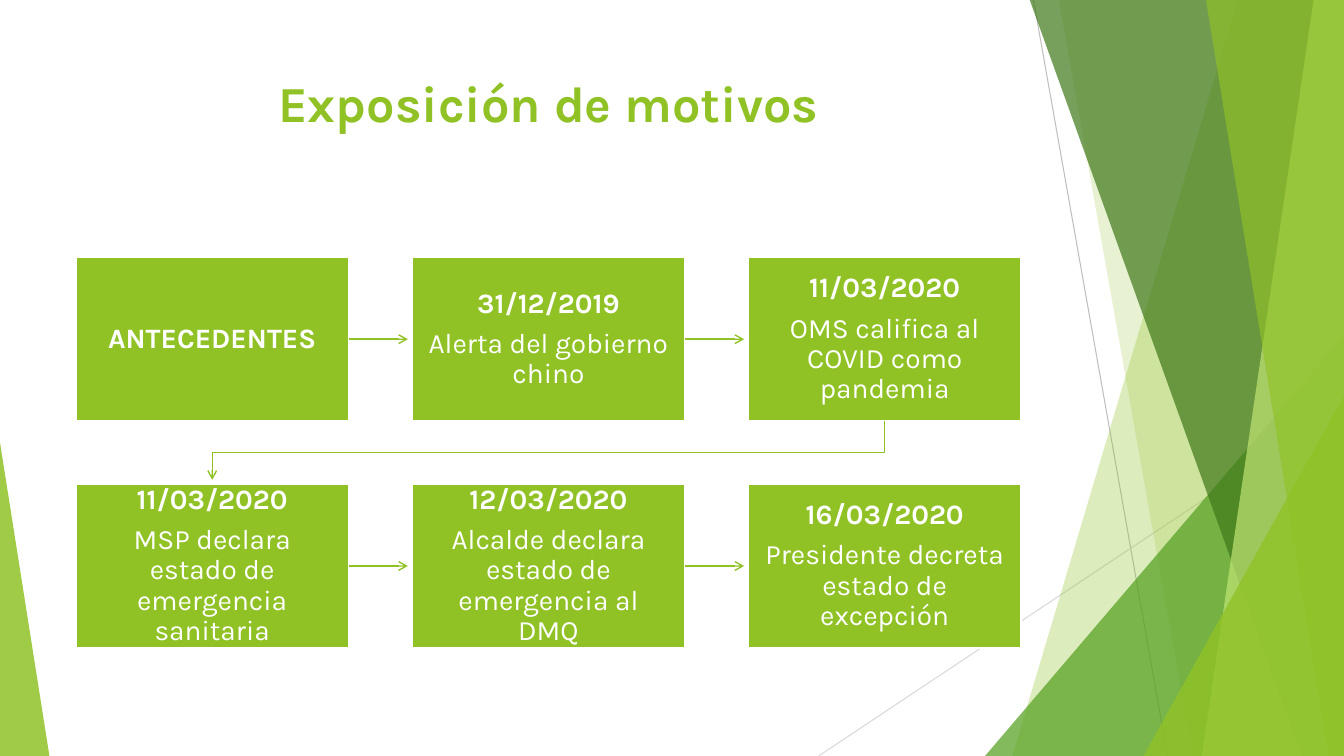
from lxml.etree import SubElement
from pptx import Presentation
from pptx.dml.color import RGBColor
from pptx.enum.shapes import MSO_CONNECTOR, MSO_SHAPE
from pptx.enum.text import MSO_ANCHOR, PP_ALIGN
from pptx.oxml.ns import qn
from pptx.util import Inches, Pt

WIDTH, HEIGHT = 13.33, 7.5
GREEN, WHITE, FONT = "90C226", "FFFFFF", "Karla"
COLUMNS, COLUMN_STEP, ROW_STEP = 3, 3.335, 2.25
BOX_WIDTH, BOX_HEIGHT, GAP = 2.71, 1.63, 0.04
EVENTS = [
    ["ANTECEDENTES"],
    ["31/12/2019", "Alerta del gobierno chino"],
    ["11/03/2020", "OMS califica al COVID como pandemia"],
    ["11/03/2020", "MSP declara estado de emergencia sanitaria"],
    ["12/03/2020", "Alcalde declara estado de emergencia al DMQ"],
    ["16/03/2020", "Presidente decreta estado de excepción"],
]


def rgb(color):
    """Return the colour for a hex string."""
    return RGBColor.from_string(color)


def set_fill(shape, color, opacity=100):
    """Give a shape a plain, possibly transparent fill without line or shadow."""
    shape.shadow.inherit = False
    shape.fill.solid()
    shape.fill.fore_color.rgb = rgb(color)
    shape.line.fill.background()
    if opacity < 100:
        color_element = shape.fill._xPr.find(qn("a:solidFill"))[0]
        SubElement(color_element, qn("a:alpha"), val=str(opacity * 1000))


def set_line(shape, color, width, arrow=False):
    """Set the line of a shape and its optional arrowhead."""
    shape.line.color.rgb = rgb(color)
    shape.line.width = Pt(width)
    if arrow:
        SubElement(shape.line._get_or_add_ln(), qn("a:tailEnd"), type="arrow")


def add_straight(slide, start, end, color, width, arrow=False):
    """Add a straight connector without shadow."""
    connector = slide.shapes.add_connector(
        MSO_CONNECTOR.STRAIGHT, *(Inches(value) for value in (*start, *end)))
    set_line(connector, color, width, arrow)
    SubElement(connector._element.spPr, qn("a:effectLst"))
    return connector


def add_outline(slide, points, close):
    """Add a freeform through points given in inches."""
    start, *rest = [(Inches(x), Inches(y)) for x, y in points]
    builder = slide.shapes.build_freeform(*start)
    builder.add_line_segments(rest, close=close)
    shape = builder.convert_to_shape()
    shape.shadow.inherit = False
    return shape


def add_band(slide, top_x, bottom_x, color, opacity):
    """Add a full-height band from a slanted left edge to the slide's right edge."""
    points = [(top_x, -0.01), (WIDTH, -0.01), (WIDTH, HEIGHT), (bottom_x, HEIGHT)]
    set_fill(add_outline(slide, points, True), color, opacity)


def add_corner(slide, left, width, height, apex, color, opacity):
    """Add a right triangle standing on the bottom of the slide."""
    shape = slide.shapes.add_shape(
        MSO_SHAPE.ISOSCELES_TRIANGLE, Inches(left), Inches(HEIGHT - height),
        Inches(width), Inches(height))
    shape.adjustments[0] = apex
    set_fill(shape, color, opacity)


def add_backdrop(slide):
    """Draw the thin lines and the overlapping green facets."""
    add_straight(slide, (10.25, 0), (11.58, HEIGHT), "BFBFBF", 0.75)
    add_straight(slide, (WIDTH, 4.03), (8.12, HEIGHT), "D9D9D9", 0.75)
    add_band(slide, 12.28, 10.04, GREEN, 30)
    add_band(slide, 10.5, 11.83, GREEN, 20)
    add_corner(slide, 9.77, 3.56, 4.17, 1, "54A021", 72)
    add_band(slide, 10.21, 12.91, "3F7819", 70)
    add_band(slide, 13.03, 11.92, "C0E474", 70)
    add_band(slide, 11.96, 13.18, GREEN, 65)
    add_corner(slide, 11.34, 1.99, 3.57, 1, GREEN, 80)
    add_corner(slide, 0, 0.49, 3.11, 0, GREEN, 85)


def write(paragraph, text, color, size, bold):
    """Write centred text in a paragraph."""
    paragraph.alignment = PP_ALIGN.CENTER
    run = paragraph.add_run()
    run.text = text
    run.font.color.rgb = rgb(color)
    for name, value in {"name": FONT, "size": Pt(size), "bold": bold}.items():
        setattr(run.font, name, value)


def add_title(slide, left, top, width, height):
    """Add the slide heading."""
    box = slide.shapes.add_textbox(*map(Inches, (left, top, width, height)))
    box.text_frame.word_wrap = True
    write(box.text_frame.paragraphs[0], "Exposición de motivos", GREEN, 36, True)


def add_event(slide, left, top, lines):
    """Add one event box with a bold first line."""
    box = slide.shapes.add_shape(
        MSO_SHAPE.RECTANGLE, *map(Inches, (left, top, BOX_WIDTH, BOX_HEIGHT)))
    set_fill(box, GREEN)
    set_line(box, WHITE, 1.5)
    frame = box.text_frame
    frame.word_wrap = True
    frame.vertical_anchor = MSO_ANCHOR.MIDDLE
    for side in ("left", "top", "right", "bottom"):
        setattr(frame, f"margin_{side}", Inches(0.16))
    for index, line in enumerate(lines):
        paragraph = frame.add_paragraph() if index else frame.paragraphs[0]
        paragraph.line_spacing = 0.9
        paragraph.space_after = Pt(7)
        write(paragraph, line, WHITE, 20, index == 0)
    return box


def add_timeline(slide, left, top):
    """Lay the events out in rows and join them with arrows."""
    for index, lines in enumerate(EVENTS):
        row, column = divmod(index, COLUMNS)
        x, y = left + column * COLUMN_STEP, top + row * ROW_STEP
        box = add_event(slide, x, y, lines)
        if column < COLUMNS - 1:
            middle = y + BOX_HEIGHT / 2
            arrow = add_straight(slide, (x + BOX_WIDTH, middle),
                                 (x + COLUMN_STEP - GAP, middle), GREEN, 1, True)
            arrow.begin_connect(box, 3)
        elif index < len(EVENTS) - 1:
            start_x, end_x = x + BOX_WIDTH / 2, left + BOX_WIDTH / 2
            bottom, next_top = y + BOX_HEIGHT, y + ROW_STEP
            turn = (bottom + next_top) / 2
            points = [(start_x, bottom), (start_x, turn), (end_x, turn),
                      (end_x, next_top - GAP)]
            bend = add_outline(slide, points, False)
            bend.fill.background()
            set_line(bend, GREEN, 1, True)


def main():
    """Build and save the slide."""
    presentation = Presentation()
    presentation.slide_width = Inches(WIDTH)
    presentation.slide_height = Inches(HEIGHT)
    slide = presentation.slides.add_slide(presentation.slide_layouts[6])
    add_backdrop(slide)
    add_title(slide, 0.74, 0.67, 9.4, 1.44)
    add_timeline(slide, 0.75, 2.55)
    presentation.save("out.pptx")


if __name__ == "__main__":
    main()
